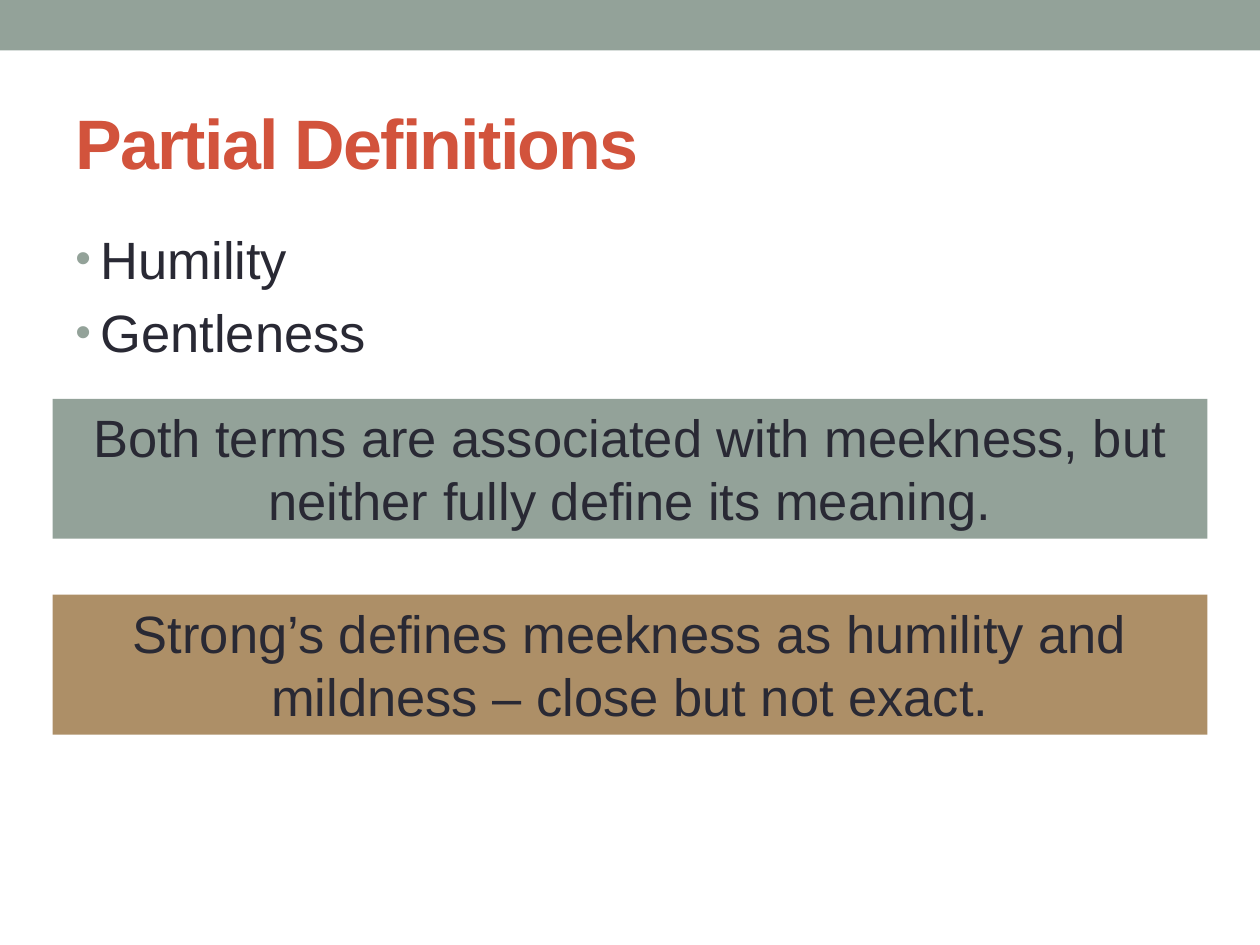
from lxml import etree
from pptx import Presentation
from pptx import util as u
from pptx.dml.color import RGBColor
from pptx.enum import shapes, text
from pptx.oxml.ns import qn

SAGE = RGBColor(0x93, 0xA2, 0x99)
TAN = RGBColor(0xAD, 0x8F, 0x67)
RED = RGBColor(0xD2, 0x53, 0x3C)
INK = RGBColor(0x29, 0x29, 0x34)

PAGE_WIDTH, PAGE_HEIGHT = u.Cm(25.4), u.Cm(19.05)
MARGIN = u.Cm(1.27)
BAND_LEFT = u.Cm(1.06)


def add_child(parent, tag, **attributes):
    child = etree.SubElement(parent, qn(tag))
    for name, value in attributes.items():
        child.set(name, str(value))
    return child


def write(para, words, size=30, colour=INK, bold=False, tracking=None,
          align=text.PP_ALIGN.LEFT):
    para.alignment = align
    span = para.add_run()
    span.text = words
    span.font.name = "Arial"
    span.font.size = u.Pt(size)
    span.font.bold = bold
    span.font.color.rgb = colour
    if tracking is not None:
        span.font._element.set("spc", str(tracking * 100))


def set_bullet(para):
    settings = para._p.get_or_add_pPr()
    settings.set("marL", str(u.Cm(0.51)))
    settings.set("indent", str(-u.Cm(0.51)))
    add_child(add_child(settings, "a:spcBef"), "a:spcPct", val=20000)
    add_child(add_child(settings, "a:buClr"), "a:srgbClr", val=SAGE)
    add_child(settings, "a:buSzPct", val=85000)
    add_child(settings, "a:buFont", typeface="Arial")
    add_child(settings, "a:buChar", char="•")


def add_bar(page, left, top, width, height, fill):
    bar = page.shapes.add_shape(shapes.MSO_SHAPE.RECTANGLE, left, top, width, height)
    bar.shadow.inherit = False
    bar.fill.solid()
    bar.fill.fore_color.rgb = fill
    bar.line.fill.background()
    return bar


def add_frame(page, left, top, width, height, anchor):
    box = page.shapes.add_textbox(left, top, width, height)
    frame = box.text_frame
    frame.word_wrap = True
    frame.vertical_anchor = anchor
    return frame


def add_title(page, left, top, width, height, words):
    frame = add_frame(page, left, top, width, height, text.MSO_ANCHOR.MIDDLE)
    write(frame.paragraphs[0], words, size=40, colour=RED, bold=True, tracking=-1)


def add_bullets(page, left, top, width, height, items):
    frame = add_frame(page, left, top, width, height, text.MSO_ANCHOR.TOP)
    for index, item in enumerate(items):
        para = frame.add_paragraph() if index else frame.paragraphs[0]
        write(para, item)
        set_bullet(para)


def add_statement(page, left, top, width, height, words, fill):
    frame = add_bar(page, left, top, width, height, fill).text_frame
    frame.word_wrap = True
    frame.vertical_anchor = text.MSO_ANCHOR.TOP
    frame.auto_size = text.MSO_AUTO_SIZE.SHAPE_TO_FIT_TEXT
    write(frame.paragraphs[0], words, align=text.PP_ALIGN.CENTER)


def add_statements(page, left, top, width, height, pitch, statements):
    for index, (words, fill) in enumerate(statements):
        add_statement(page, left, top + index * pitch, width, height, words, fill)


def main():
    deck = Presentation()
    deck.slide_width, deck.slide_height = PAGE_WIDTH, PAGE_HEIGHT
    page = deck.slides.add_slide(deck.slide_layouts[6])
    inner_width = PAGE_WIDTH - 2 * MARGIN

    add_bar(page, 0, 0, PAGE_WIDTH, u.Cm(1.02), SAGE)
    add_title(page, MARGIN, u.Cm(1.48), inner_width, u.Cm(2.74), "Partial Definitions")
    add_bullets(page, MARGIN, u.Cm(4.45), inner_width, u.Cm(3.39),
                ["Humility", "Gentleness"])
    add_statements(page, BAND_LEFT, u.Cm(8.04), PAGE_WIDTH - 2 * BAND_LEFT,
                   u.Cm(2.82), u.Cm(3.95), [
        ("Both terms are associated with meekness, but neither fully define its meaning.",
         SAGE),
        ("Strong’s defines meekness as humility and mildness – close but not exact.",
         TAN),
    ])
    deck.save("out.pptx")


if __name__ == "__main__":
    main()
